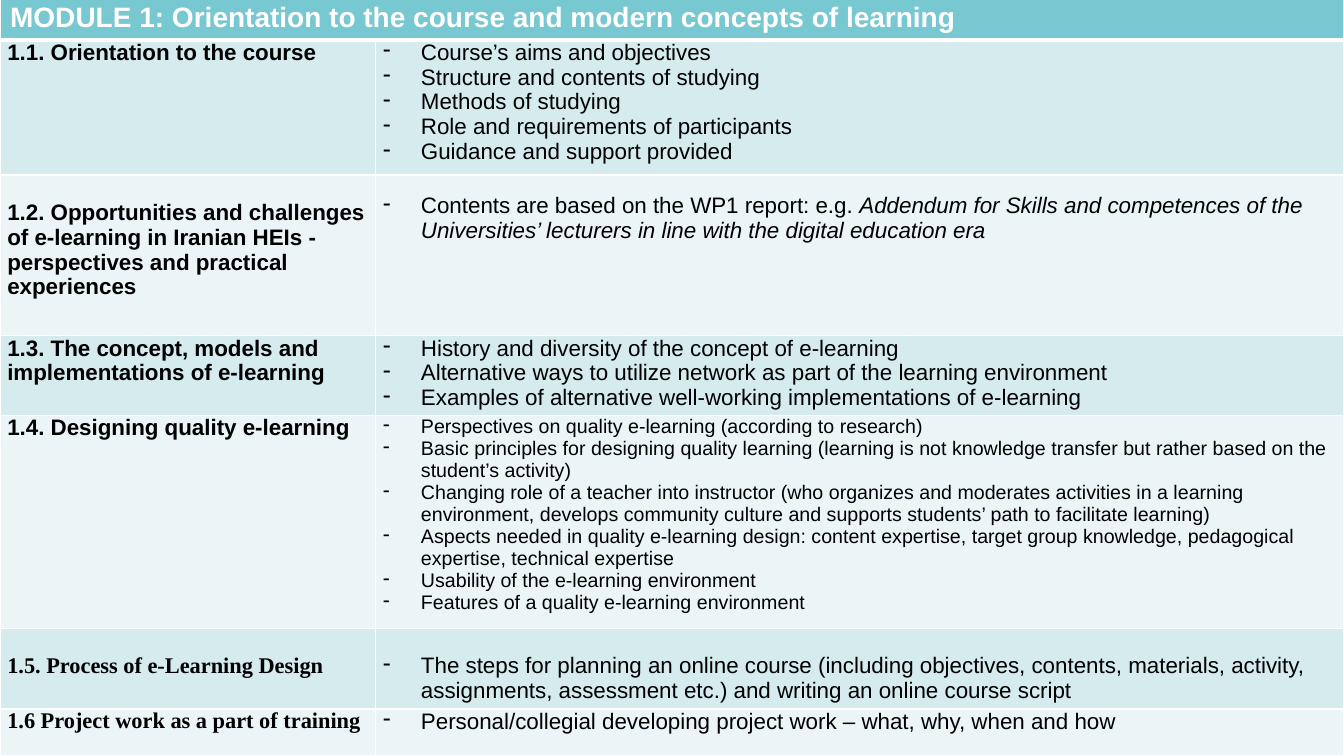
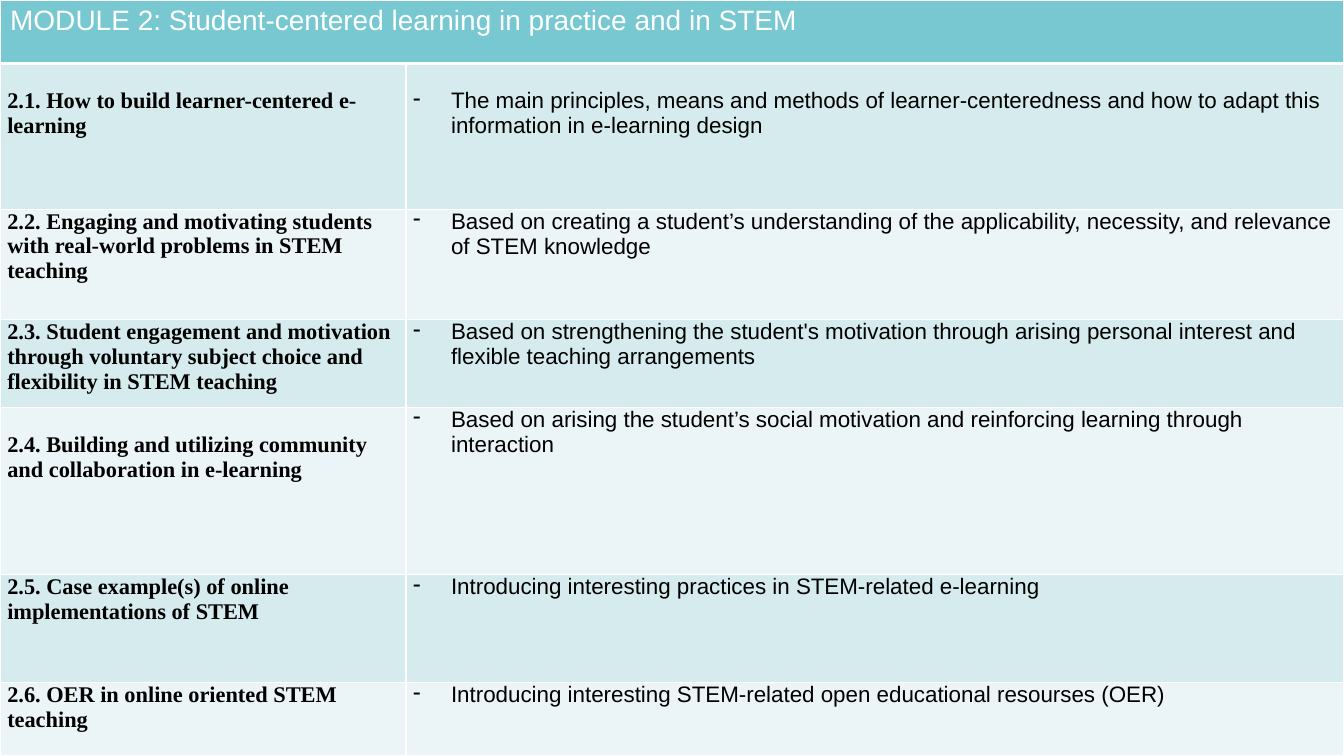
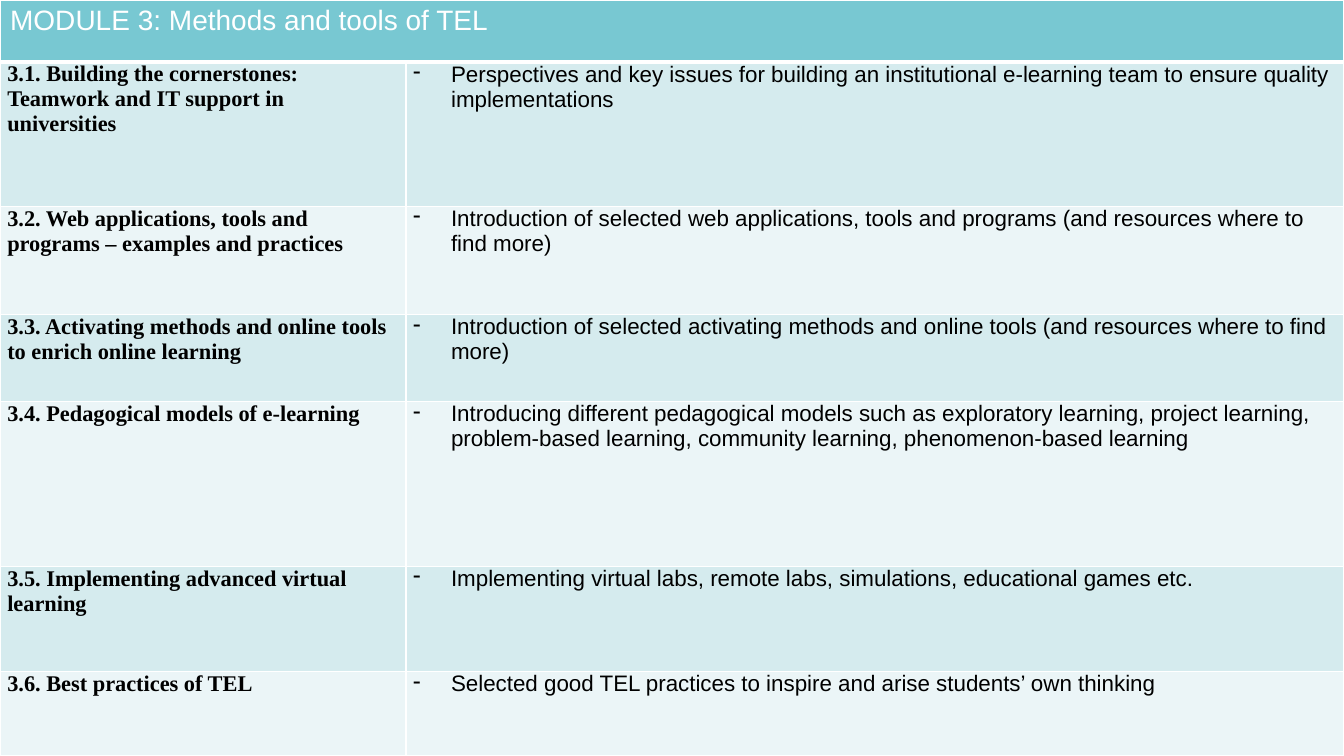
import dataclasses

import pptx
import pptx.dml.color
import pptx.oxml
import pptx.oxml.ns
import pptx.util

Pt = pptx.util.Pt


@dataclasses.dataclass(frozen=True)
class Theme:
    header_fill: str = "78C8D2"
    row_fills: tuple = ("D5EBEE", "EBF5F7")
    border: str = "FFFFFF"
    header_text: str = "FFFFFF"
    body_text: str = "000000"
    sans: str = "Arial"
    serif: str = "Times New Roman"
    header_size: int = 20
    body_size: int = 16
    small_size: int = 14
    thin_line: int = 1
    thick_line: int = 3
    slide_width: int = 960
    slide_height: int = 540
    hanging: int = 27
    side_margin: float = 5.2


THEME = Theme()


@dataclasses.dataclass(frozen=True)
class Topic:
    label: str
    points: tuple
    label_font: str = THEME.serif
    point_size: int = THEME.body_size
    label_gap: float = 0
    points_gap: float = 0


@dataclasses.dataclass(frozen=True)
class Module:
    """One slide; the last table row reaches the foot of the slide."""
    title: str
    topics: tuple
    heights: tuple
    label_width: float
    top: float = 0
    title_bold: bool = False


MODULES = (
    Module(
        "MODULE 1: Orientation to the course and modern concepts of learning",
        (
            Topic("1.1. Orientation to the course",
                  ("Course’s aims and objectives",
                   "Structure and contents of studying",
                   "Methods of studying",
                   "Role and requirements of participants",
                   "Guidance and support provided"),
                  label_font=THEME.sans),
            Topic("1.2. Opportunities and challenges of e-learning in Iranian HEIs - "
                  "perspectives and practical experiences",
                  (("Contents are based on the WP1 report: e.g. ",
                    "Addendum for Skills and competences of the Universities’ lecturers "
                    "in line with the digital education era"),),
                  label_font=THEME.sans, label_gap=18, points_gap=13.5),
            Topic("1.3. The concept, models and implementations of e-learning",
                  ("History and diversity of the concept of e-learning",
                   "Alternative ways to utilize network as part of the learning environment",
                   "Examples of alternative well-working implementations of e-learning"),
                  label_font=THEME.sans),
            Topic("1.4. Designing quality e-learning",
                  ("Perspectives on quality e-learning (according to research)",
                   "Basic principles for designing quality learning (learning is not knowledge "
                   "transfer but rather based on the student’s activity)",
                   "Changing role of a teacher into instructor (who organizes and moderates "
                   "activities in a learning environment, develops community culture and "
                   "supports students’ path to facilitate learning)",
                   "Aspects needed in quality e-learning design: content expertise, target "
                   "group knowledge, pedagogical expertise, technical expertise",
                   "Usability of the e-learning environment",
                   "Features of a quality e-learning environment"),
                  label_font=THEME.sans, point_size=THEME.small_size),
            Topic("1.5. Process of e-Learning Design",
                  ("The steps for planning an online course (including objectives, contents, "
                   "materials, activity, assignments, assessment etc.) and writing an online "
                   "course script",),
                  label_gap=18, points_gap=18),
            Topic("1.6 Project work as a part of training",
                  ("Personal/collegial developing project work – what, why, when and how",)),
        ),
        heights=(30.6, 96.4, 115, 57, 152, 57.5), label_width=268.5, top=-2, title_bold=True),
    Module(
        "MODULE 2: Student-centered learning in practice and in STEM",
        (
            Topic("2.1. How to build learner-centered e-learning",
                  ("The main principles, means and methods of learner-centeredness and how to "
                   "adapt this information in e-learning design",),
                  label_gap=18, points_gap=18),
            Topic("2.2. Engaging and motivating students with real-world problems in STEM teaching",
                  ("Based on creating a student’s understanding of the applicability, "
                   "necessity, and relevance of STEM knowledge",)),
            Topic("2.3. Student engagement and motivation through voluntary subject choice and "
                  "flexibility in STEM teaching",
                  ("Based on strengthening the student's motivation through arising personal "
                   "interest and flexible teaching arrangements",)),
            Topic("2.4. Building and utilizing community and collaboration in e-learning",
                  ("Based on arising the student’s social motivation and reinforcing learning "
                   "through interaction",),
                  label_gap=18),
            Topic("2.5. Case example(s) of online implementations of STEM",
                  ("Introducing interesting practices in STEM-related e-learning",)),
            Topic("2.6. OER in online oriented STEM teaching",
                  ("Introducing interesting STEM-related open educational resourses (OER)",)),
        ),
        heights=(45.4, 104, 79, 62.5, 119.6, 77), label_width=290),
    Module(
        "MODULE 3: Methods and tools of TEL",
        (
            Topic("3.1. Building the cornerstones: Teamwork and IT support in universities",
                  ("Perspectives and key issues for building an institutional e-learning team "
                   "to ensure quality implementations",)),
            Topic("3.2. Web applications, tools and programs – examples and practices",
                  ("Introduction of selected web applications, tools and programs (and "
                   "resources where to find more)",)),
            Topic("3.3. Activating methods and online tools to enrich online learning",
                  ("Introduction of selected activating methods and online tools (and "
                   "resources where to find more)",)),
            Topic("3.4. Pedagogical models of e-learning",
                  ("Introducing different pedagogical models such as exploratory learning, "
                   "project learning, problem-based learning, community learning, "
                   "phenomenon-based learning",)),
            Topic("3.5. Implementing advanced virtual learning",
                  ("Implementing virtual labs, remote labs, simulations, educational games etc.",)),
            Topic("3.6. Best practices of TEL",
                  ("Selected good TEL practices to inspire and arise students’ own thinking",)),
        ),
        heights=(44.3, 103, 77.6, 62, 117.6, 75.4), label_width=290),
)


def rgb(value):
    return pptx.dml.color.RGBColor.from_string(value)


def add_text(para, text, *, size=THEME.body_size, font=THEME.sans,
             color=THEME.body_text, bold=False, italic=False):
    span = para.add_run()
    span.text = text
    span.font.size = Pt(size)
    span.font.name = font
    span.font.color.rgb = rgb(color)
    span.font.bold = bold
    span.font.italic = italic


def add_dash(para):
    """Give the paragraph a dash bullet with a hanging indent."""
    properties = para._p.get_or_add_pPr()
    properties.set("marL", str(Pt(THEME.hanging)))
    properties.set("indent", str(-Pt(THEME.hanging)))
    color = pptx.oxml.ns.qn("a:buClr")
    bullet_color = properties.makeelement(color, {})
    bullet_color.append(properties.makeelement(
        pptx.oxml.ns.qn("a:srgbClr"), {"val": THEME.body_text}))
    properties.append(bullet_color)
    properties.append(properties.makeelement(pptx.oxml.ns.qn("a:buChar"), {"char": "-"}))


def style_cell(cell, fill, *, side=THEME.side_margin, top=0, bottom=0,
               top_line=THEME.thin_line, bottom_line=THEME.thin_line):
    cell.margin_left = cell.margin_right = Pt(side)
    cell.margin_top, cell.margin_bottom = Pt(top), Pt(bottom)
    cell.fill.solid()
    cell.fill.fore_color.rgb = rgb(fill)
    properties = cell._tc.get_or_add_tcPr()
    widths = {"lnL": THEME.thin_line, "lnR": THEME.thin_line,
              "lnT": top_line, "lnB": bottom_line}
    for index, (edge, width) in enumerate(widths.items()):
        properties.insert(index, pptx.oxml.parse_xml(
            f'<a:{edge} {pptx.oxml.ns.nsdecls("a")} w="{Pt(width)}"><a:solidFill>'
            f'<a:srgbClr val="{THEME.border}"/></a:solidFill></a:{edge}>'))


def fill_header(table, module):
    table.cell(0, 0).merge(table.cell(0, 1))
    for column in range(2):
        style_cell(table.cell(0, column), THEME.header_fill, side=7.2, top=3.6, bottom=3.6,
                   bottom_line=THEME.thick_line)
    add_text(table.cell(0, 0).text_frame.paragraphs[0], module.title,
             size=THEME.header_size, color=THEME.header_text, bold=module.title_bold)


def fill_points(frame, topic):
    """Write one dash paragraph per point; the second part of a pair is italic."""
    for index, point in enumerate(topic.points):
        para = frame.add_paragraph() if index else frame.paragraphs[0]
        add_dash(para)
        parts = (point,) if isinstance(point, str) else point
        for part_index, part in enumerate(parts):
            add_text(para, part, size=topic.point_size, italic=part_index > 0)


def fill_topic(table, row, topic):
    fill = THEME.row_fills[(row - 1) % 2]
    top_line = THEME.thick_line if row == 1 else THEME.thin_line
    label, points = table.cell(row, 0), table.cell(row, 1)
    style_cell(label, fill, top=topic.label_gap, top_line=top_line)
    style_cell(points, fill, top=topic.points_gap, top_line=top_line)
    add_text(label.text_frame.paragraphs[0], topic.label, font=topic.label_font, bold=True)
    fill_points(points.text_frame, topic)


def add_module(deck, module):
    page = deck.slides.add_slide(deck.slide_layouts[6])
    total = THEME.slide_height - module.top
    heights = module.heights + (total - sum(module.heights),)
    table = page.shapes.add_table(len(heights), 2, 0, Pt(module.top),
                                  Pt(THEME.slide_width), Pt(total)).table
    table.columns[0].width = Pt(module.label_width)
    table.columns[1].width = Pt(THEME.slide_width - module.label_width)
    for row, height in zip(table.rows, heights):
        row.height = Pt(height)
    fill_header(table, module)
    for row, topic in enumerate(module.topics, start=1):
        fill_topic(table, row, topic)


def main():
    deck = pptx.Presentation()
    deck.slide_width = Pt(THEME.slide_width)
    deck.slide_height = Pt(THEME.slide_height)
    for module in MODULES:
        add_module(deck, module)
    deck.save("out.pptx")


if __name__ == "__main__":
    main()
